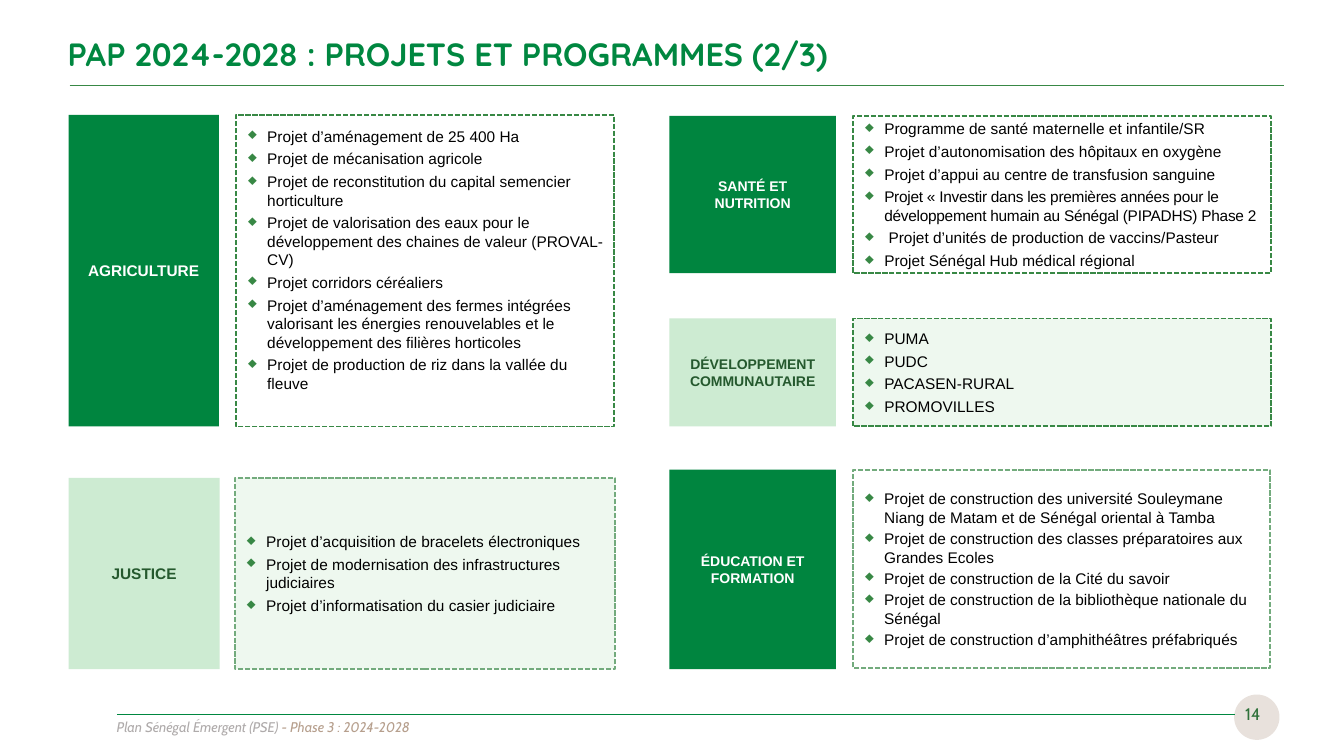
from lxml.etree import SubElement
from pptx import Presentation
from pptx.dml.color import RGBColor
from pptx.enum.dml import MSO_LINE
from pptx.enum.shapes import MSO_CONNECTOR, MSO_SHAPE
from pptx.enum.text import MSO_ANCHOR, MSO_AUTO_SIZE, PP_ALIGN
from pptx.oxml.ns import qn
from pptx.util import Pt

PX = 9144  # 100 px to the inch
COLORS = {
    "title": "008740", "rule": "388845", "soft_rule": "73AB7D",
    "green": "00853F", "mint": "CDEBD2", "pale": "EEF8EF",
    "white": "FFFFFF", "black": "000000", "dark_green": "25592E",
    "disc": "E8E1DC", "number": "2F713A", "grey": "AFABAB", "tan": "B69F8D",
}


def write(para, text, size=11, color="black", font="Arial", bold=False, italic=False):
    span = para.add_run()
    span.text = text
    span.font.size = Pt(size)
    span.font.name = font
    span.font.bold = bold
    span.font.italic = italic
    span.font.color.rgb = RGBColor.from_string(COLORS[color])
    return span


def draw_rule(x1, x2, y, color):
    rule = page.shapes.add_connector(MSO_CONNECTOR.STRAIGHT, x1 * PX, y * PX, x2 * PX, y * PX)
    rule.line.color.rgb = RGBColor.from_string(COLORS[color])
    rule.line.width = Pt(1)
    SubElement(rule._element.spPr, qn("a:effectLst"))


deck = Presentation()
deck.slide_width, deck.slide_height = 1333 * PX, 750 * PX
page = deck.slides.add_slide(deck.slide_layouts.get_by_name("Title Only"))

# Title
title = page.shapes.title
title.left, title.top, title.width, title.height = 57 * PX, 29 * PX, 1059 * PX, 49 * PX
title.text_frame.auto_size = MSO_AUTO_SIZE.NONE
title.text_frame.vertical_anchor = MSO_ANCHOR.MIDDLE
heading = title.text_frame.paragraphs[0]
heading.alignment = PP_ALIGN.LEFT
write(heading, "PAP 2024-2028 : PROJETS ET PROGRAMMES (2/3)",
      size=23, color="title", font="Quicksand", bold=True)
draw_rule(69, 1274, 85, "rule")

# Footer
disc = page.shapes.add_shape(MSO_SHAPE.OVAL, 1224 * PX, 689 * PX, 45 * PX, 45 * PX)
disc.shadow.inherit = False
disc.fill.solid()
disc.fill.fore_color.rgb = RGBColor.from_string(COLORS["disc"])
disc.line.fill.background()
draw_rule(116, 1225, 709, "title")

footer = page.shapes.add_textbox(106 * PX, 708 * PX, 963 * PX, 27 * PX)
footer.text_frame.word_wrap = True
footer_para = footer.text_frame.paragraphs[0]
write(footer_para, "Plan Sénégal Émergent (PSE) ", size=10, color="grey", font="Cabin", italic=True)
write(footer_para, "- Phase 3 : 2024-2028", size=10, color="tan", font="Cabin", italic=True)

number = page.shapes.add_textbox(1203 * PX, 688 * PX, 57 * PX, 40 * PX)
number.text_frame.word_wrap = True
number.text_frame.vertical_anchor = MSO_ANCHOR.MIDDLE
number_para = number.text_frame.paragraphs[0]
number_para.alignment = PP_ALIGN.RIGHT
write(number_para, "14", size=12, color="number", font="Cabin")

# Sectors: label, label size, label box, list box, right and bottom insets,
# space after (pt), tinted, border, projects
SECTORS = [
    ("AGRICULTURE", 11, (68, 114, 149, 309), (234, 114, 375, 309), 8, 27, 3, False, "rule", [
        "Projet d’aménagement de 25 400 Ha",
        "Projet de mécanisation agricole",
        "Projet de reconstitution du capital semencier horticulture",
        "Projet de valorisation des eaux pour le développement des chaines de valeur (PROVAL-CV)",
        "Projet corridors céréaliers",
        "Projet d’aménagement des fermes intégrées valorisant les énergies renouvelables "
        "et le développement des filières horticoles",
        "Projet de production de riz dans la vallée du fleuve",
    ]),
    ("JUSTICE", 11, (68, 474, 150, 190), (233, 474, 377, 190), 20, 5, 3, True, "soft_rule", [
        "Projet d’acquisition de bracelets électroniques",
        "Projet de modernisation des infrastructures judiciaires",
        "Projet d’informatisation du casier judiciaire",
    ]),
    ("SANTÉ ET NUTRITION", 10, (664, 115, 165, 156), (846, 115, 415, 156), 12, 5, 3, False, "rule", [
        "Programme de santé maternelle et infantile/SR",
        "Projet d’autonomisation des hôpitaux en oxygène",
        "Projet d’appui au centre de transfusion sanguine",
        "Projet « Investir dans les premières années pour le développement humain "
        "au Sénégal (PIPADHS) Phase 2",
        " Projet d’unités de production de vaccins/Pasteur",
        "Projet Sénégal Hub médical régional",
    ]),
    ("DÉVELOPPEMENT COMMUNAUTAIRE", 10, (664, 316, 165, 107), (846, 316, 415, 107),
     20, 5, 3, True, "rule", ["PUMA", "PUDC", "PACASEN-RURAL", "PROMOVILLES"]),
    ("ÉDUCATION ET FORMATION", 10, (664, 466, 165, 198), (846, 466, 414, 197),
     20, 5, 2, False, "soft_rule", [
        "Projet de construction des université Souleymane Niang de Matam "
        "et de Sénégal oriental à Tamba",
        "Projet de construction des classes préparatoires aux Grandes Ecoles",
        "Projet de construction de la Cité du savoir",
        "Projet de construction de la bibliothèque nationale du Sénégal",
        "Projet de construction d’amphithéâtres préfabriqués",
    ]),
]
CONDENSED = "Projet « Investir"

for name, size, label_area, list_area, right, bottom, gap, tinted, border, projects in SECTORS:
    boxes = []
    for area, fill in ((list_area, "pale" if tinted else "white"),
                       (label_area, "mint" if tinted else "green")):
        box = page.shapes.add_shape(MSO_SHAPE.RECTANGLE, *(value * PX for value in area))
        box.shadow.inherit = False
        box.fill.solid()
        box.fill.fore_color.rgb = RGBColor.from_string(COLORS[fill])
        box.text_frame.word_wrap = True
        box.text_frame.vertical_anchor = MSO_ANCHOR.MIDDLE
        boxes.append(box)
    list_box, label_box = boxes

    label_box.line.fill.background()
    label = label_box.text_frame.paragraphs[0]
    label.alignment = PP_ALIGN.CENTER
    write(label, name, size=size, color="dark_green" if tinted else "white", bold=True)

    list_box.line.color.rgb = RGBColor.from_string(COLORS[border])
    list_box.line.width = Pt(1.25)
    list_box.line.dash_style = MSO_LINE.SQUARE_DOT
    frame = list_box.text_frame
    frame.margin_left, frame.margin_right = 12 * PX, right * PX
    frame.margin_top, frame.margin_bottom = 5 * PX, bottom * PX
    for index, project in enumerate(projects):
        para = frame.add_paragraph() if index else frame.paragraphs[0]
        para.alignment = PP_ALIGN.LEFT
        para.space_after = Pt(gap)
        props = para._p.get_or_add_pPr()
        props.set("marL", str(19 * PX))
        props.set("indent", str(-19 * PX))
        bullet_color = SubElement(props, qn("a:buClr"))
        SubElement(bullet_color, qn("a:srgbClr"), val=COLORS["rule"])
        SubElement(props, qn("a:buChar"), char="♦")
        span = write(para, project)
        if project.startswith(CONDENSED):
            span.font._element.set("spc", "-20")

deck.save("out.pptx")
